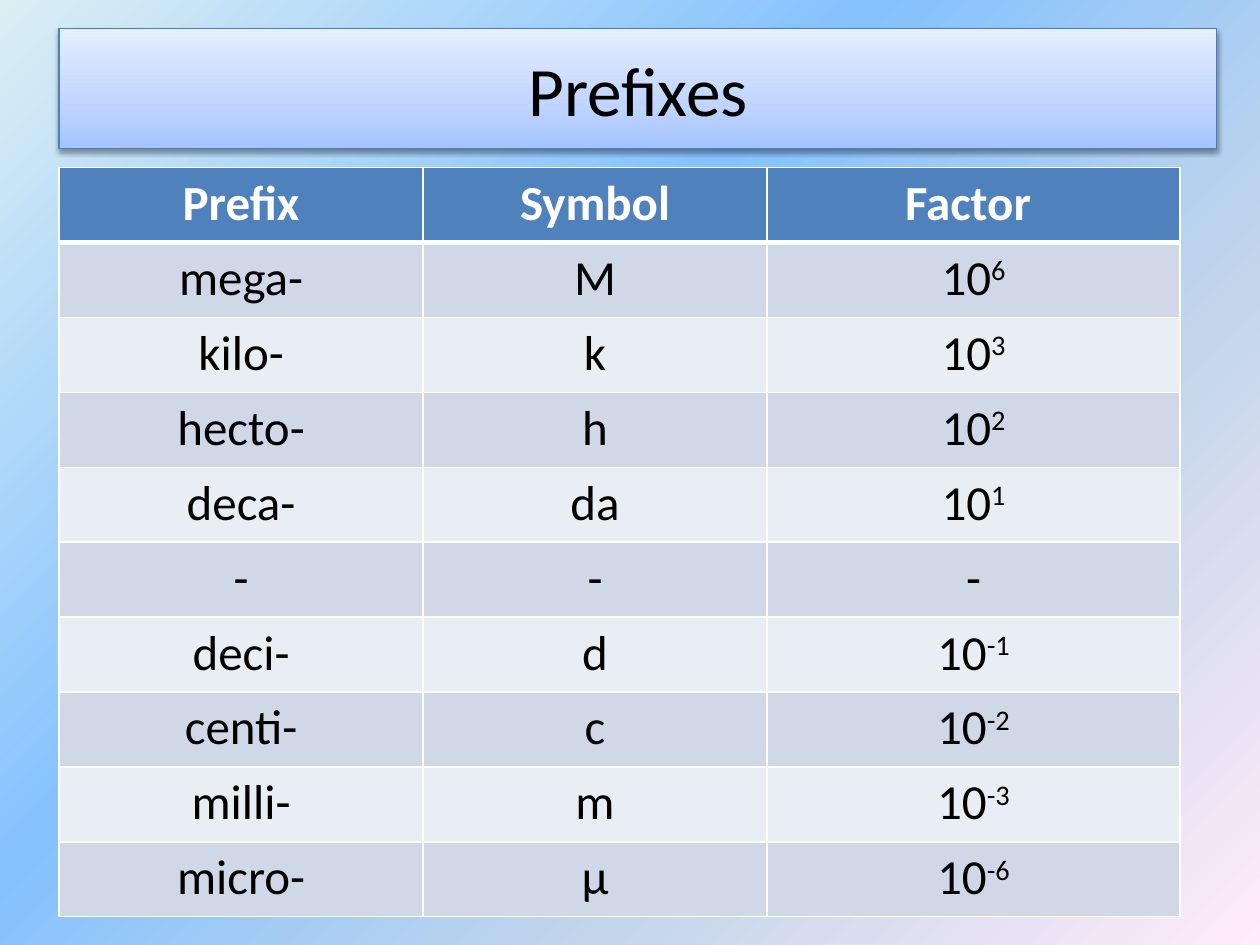
from pptx import Presentation, util as u
from pptx.dml.color import RGBColor
from pptx.enum import text
from pptx.oxml import parse_xml
from pptx.oxml.ns import nsdecls

# Content: prefix, symbol, power of ten (None for the unit itself)
TITLE = "Prefixes"
HEAD = ("Prefix", "Symbol", "Factor ")
ROWS = [
    ("mega-", "M", "6"),
    ("kilo-", "k", "3"),
    ("hecto-", "h", "2"),
    ("deca-", "da", "1"),
    ("-", "-", None),
    ("deci-", "d", "-1"),
    ("centi-", "c", "-2"),
    ("milli-", "m", "-3"),
    ("micro-", "µ", "-6"),
]

# Look
HUE = {"head": "4F81BD", "odd": "D0D8E8", "even": "E9EDF4",
       "ink": "000000", "rule": "FFFFFF", "edge": "4B7EBC"}
SKY = [(0, "DBEEF4"), (40, "85C2FF"), (70, "C4D6EB"), (100, "FFEBFA")]
BAR = [(0, "A4C4FF"), (35, "BFD4FF"), (100, "E6EEFF")]
FONT = "Calibri"
LEFT = u.Cm(1.19)
BOX = {"left": LEFT, "top": u.Cm(0.58), "width": u.Cm(23.34), "height": u.Cm(2.41)}
TOP, TALL = u.Cm(3.38), u.Cm(1.51)
COLS = [u.Cm(7.34), u.Cm(6.93), u.Cm(8.33)]
NS = nsdecls("a", "p")


def blend(stops, angle):
    marks = "".join(f'<a:gs pos="{at * 1000}"><a:srgbClr val="{hue}"/></a:gs>'
                    for at, hue in stops)
    return (f'<a:gradFill {NS} rotWithShape="1"><a:gsLst>{marks}</a:gsLst>'
            f'<a:lin ang="{angle * 60000}" scaled="0"/></a:gradFill>')


def line(tag, hue, width):
    return (f'<a:{tag} {NS} w="{u.Pt(width)}"><a:solidFill>'
            f'<a:srgbClr val="{hue}"/></a:solidFill></a:{tag}>')


def style(font, size, hue, bold=False):
    look = {"name": FONT, "size": u.Pt(size), "bold": bold}
    for key, val in look.items():
        setattr(font, key, val)
    font.color.rgb = RGBColor.from_string(hue)


def write(cell, words, power, fill, hue, bold):
    para = cell.text_frame.paragraphs[0]
    para.alignment = text.PP_ALIGN.CENTER
    for part, base in ((words, 0), (power, 30000)):
        if part:
            run = para.add_run()
            run.text = part
            style(run.font, 28, hue, bold)
            if base:
                run.font._element.set("baseline", str(base))
    # Borders come before the fill in the cell properties
    props = cell._tc.get_or_add_tcPr()
    for side in "LRTB":
        heavy = (bold and side == "B")
        props.append(parse_xml(line("ln" + side, HUE["rule"], 3 if heavy else 1)))
    cell.fill.solid()
    cell.fill.fore_color.rgb = RGBColor.from_string(fill)


deck = Presentation()
deck.slide_width, deck.slide_height = u.Cm(25.4), u.Cm(19.05)
slide = deck.slides.add_slide(deck.slide_layouts[5])

# Background
slide.element.cSld.insert(0, parse_xml(
    f'<p:bg {NS}><p:bgPr>{blend(SKY, 45)}<a:effectLst/></p:bgPr></p:bg>'))

# Title bar: gradient, thin edge, soft shadow below
title = slide.shapes.title
for key, val in BOX.items():
    setattr(title, key, val)
for xml in (
    f'<a:prstGeom {NS} prst="parallelogram"><a:avLst>'
    '<a:gd name="adj" fmla="val 0"/></a:avLst></a:prstGeom>',
    blend(BAR, 270),
    line("ln", HUE["edge"], 0.75),
    f'<a:effectLst {NS}><a:outerShdw blurRad="{u.Pt(3.1)}" dist="{u.Pt(1.6)}" '
    'dir="5400000" rotWithShape="0"><a:srgbClr val="000000">'
    '<a:alpha val="38000"/></a:srgbClr></a:outerShdw></a:effectLst>',
):
    title._element.spPr.append(parse_xml(xml))
frame = title.text_frame
frame.text = TITLE
for key, val in {"auto_size": text.MSO_AUTO_SIZE.NONE, "word_wrap": True,
                 "vertical_anchor": text.MSO_ANCHOR.MIDDLE}.items():
    setattr(frame, key, val)
frame.paragraphs[0].alignment = text.PP_ALIGN.CENTER
style(frame.paragraphs[0].runs[0].font, 39.6, HUE["ink"])

# Table
count = len(ROWS) + 1
grid = slide.shapes.add_table(count, len(COLS), LEFT, TOP,
                              sum(COLS), TALL * count).table
for col, wide in zip(grid.columns, COLS):
    col.width = wide
for row in grid.rows:
    row.height = TALL
for c, words in enumerate(HEAD):
    write(grid.cell(0, c), words, None, HUE["head"], HUE["rule"], True)
for r, (name, sign, power) in enumerate(ROWS, 1):
    fill = HUE["odd" if r % 2 else "even"]
    cells = ((name, None), (sign, None), ("10" if power else "-", power))
    for c, (words, high) in enumerate(cells):
        write(grid.cell(r, c), words, high, fill, HUE["ink"], False)

deck.save("out.pptx")
